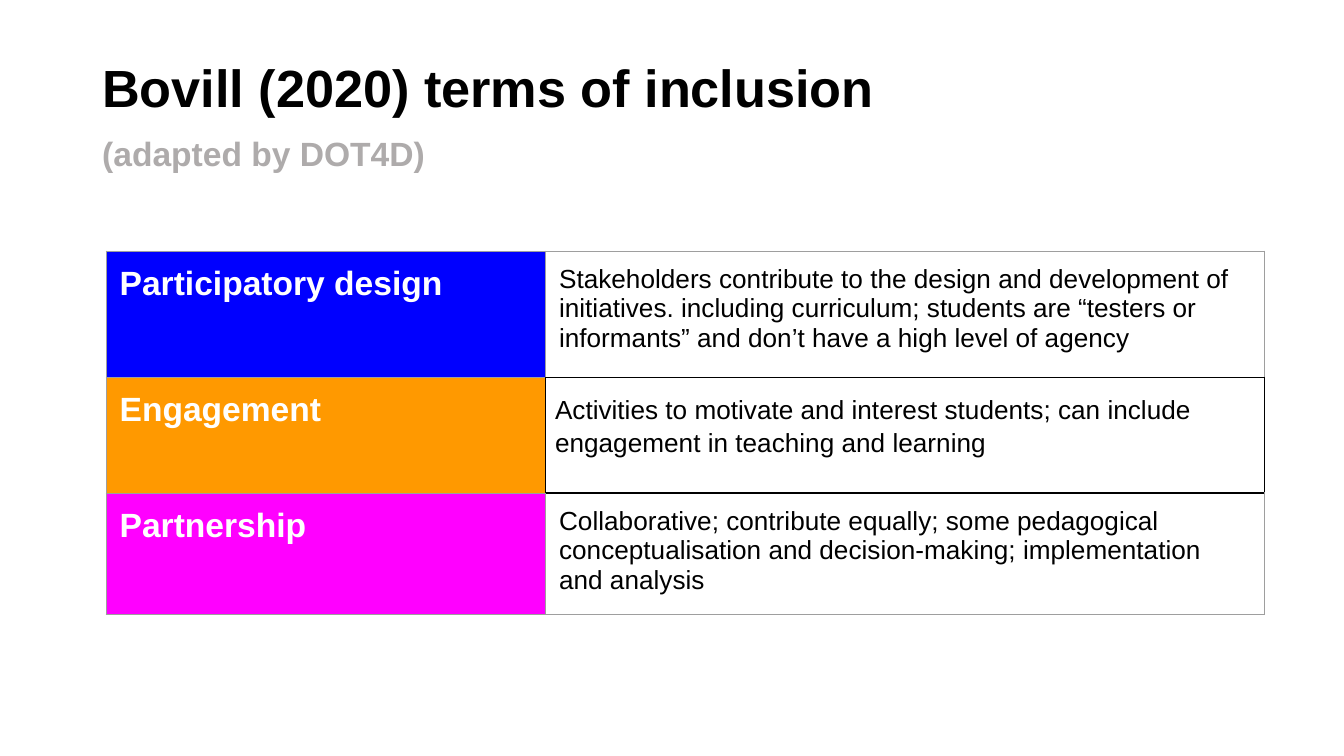
from pptx import Presentation
from pptx.dml.color import RGBColor
from pptx.enum.text import MSO_ANCHOR
from pptx.oxml.xmlchemy import OxmlElement
from pptx.util import Inches, Pt

GRAY, BLACK, WHITE = "9E9E9E", "000000", "FFFFFF"


def rgb(color):
    return RGBColor.from_string(color)


def add_run(p, text, size, color, bold=False):
    r = p.add_run()
    r.text = text
    r.font.name = "Arial"
    r.font.size = Pt(size)
    r.font.bold = bold
    r.font.color.rgb = rgb(color)


# Widescreen slide, 16:9
prs = Presentation()
prs.slide_width = Inches(10)
prs.slide_height = Inches(10) * 9 // 16
s = prs.slides.add_slide(prs.slide_layouts[6])

# Title and subtitle
title = s.shapes.add_textbox(Inches(0.69), Inches(0.6), Inches(8.62), Inches(0.56))
tf = title.text_frame
tf.word_wrap = True
tf.vertical_anchor = MSO_ANCHOR.MIDDLE
tf.margin_left = tf.margin_right = Inches(0.07)
tf.margin_top = tf.margin_bottom = Inches(0.04)
p = tf.paragraphs[0]
p.line_spacing = 0.9
add_run(p, "Bovill (2020) terms of inclusion", 28, BLACK, True)
p = tf.add_paragraph()
p.line_spacing = 0.9
p.space_before = Pt(10)
add_run(p, "(adapted by DOT4D)", 18, "AEABAB", True)

# Table of terms: name, fill, row height, description
terms = [
    ("Participatory design", "0000FF", 0.94,
     "Stakeholders contribute to the design and development of initiatives. "
     "including curriculum; students are “testers or informants” and don’t "
     "have a high level of agency"),
    ("Engagement", "FF9900", 0.86,
     "Activities to motivate and interest students; can include engagement "
     "in teaching and learning"),
    ("Partnership", "FF00FF", 0.72,
     "Collaborative; contribute equally; some pedagogical conceptualisation "
     "and decision-making; implementation and analysis"),
]
# Cells whose sides are black; all other sides are gray
black_sides = {(0, 1): "B", (1, 0): "R", (1, 1): "LRTB", (2, 1): "T"}

frame = s.shapes.add_table(len(terms), 2, Inches(0.79), Inches(1.87),
                           Inches(8.62), Inches(2.52))
table = frame.table
table.first_row = table.horz_banding = False
table.columns[0].width = Inches(3.27)
table.columns[1].width = Inches(5.35)

for row, (name, fill, height, description) in enumerate(terms):
    table.rows[row].height = Inches(height)
    texts = [(name, 18, WHITE, True), (description, 14, BLACK, False)]
    for col, text in enumerate(texts):
        cell = table.cell(row, col)
        cell.margin_left = cell.margin_right = Inches(0.1)
        cell.margin_top = cell.margin_bottom = Inches(0.1)
        add_run(cell.text_frame.paragraphs[0], *text)

        # Borders come before the fill in the cell properties
        tc_pr = cell._tc.get_or_add_tcPr()
        for side in "LRTB":
            dark = side in black_sides.get((row, col), "")
            ln = OxmlElement(f"a:ln{side}")
            ln.set("w", str(Pt(1 if dark else 0.75)))
            line_fill = OxmlElement("a:solidFill")
            clr = OxmlElement("a:srgbClr")
            clr.set("val", BLACK if dark else GRAY)
            line_fill.append(clr)
            ln.append(line_fill)
            tc_pr.append(ln)
        if col == 0:
            cell.fill.solid()
            cell.fill.fore_color.rgb = rgb(fill)
        else:
            cell.fill.background()

# The engagement description is set looser, with narrower side margins
cell = table.cell(1, 1)
cell.margin_left = cell.margin_right = Inches(0.07)
cell.text_frame.paragraphs[0].line_spacing = 1.15

prs.save("out.pptx")
